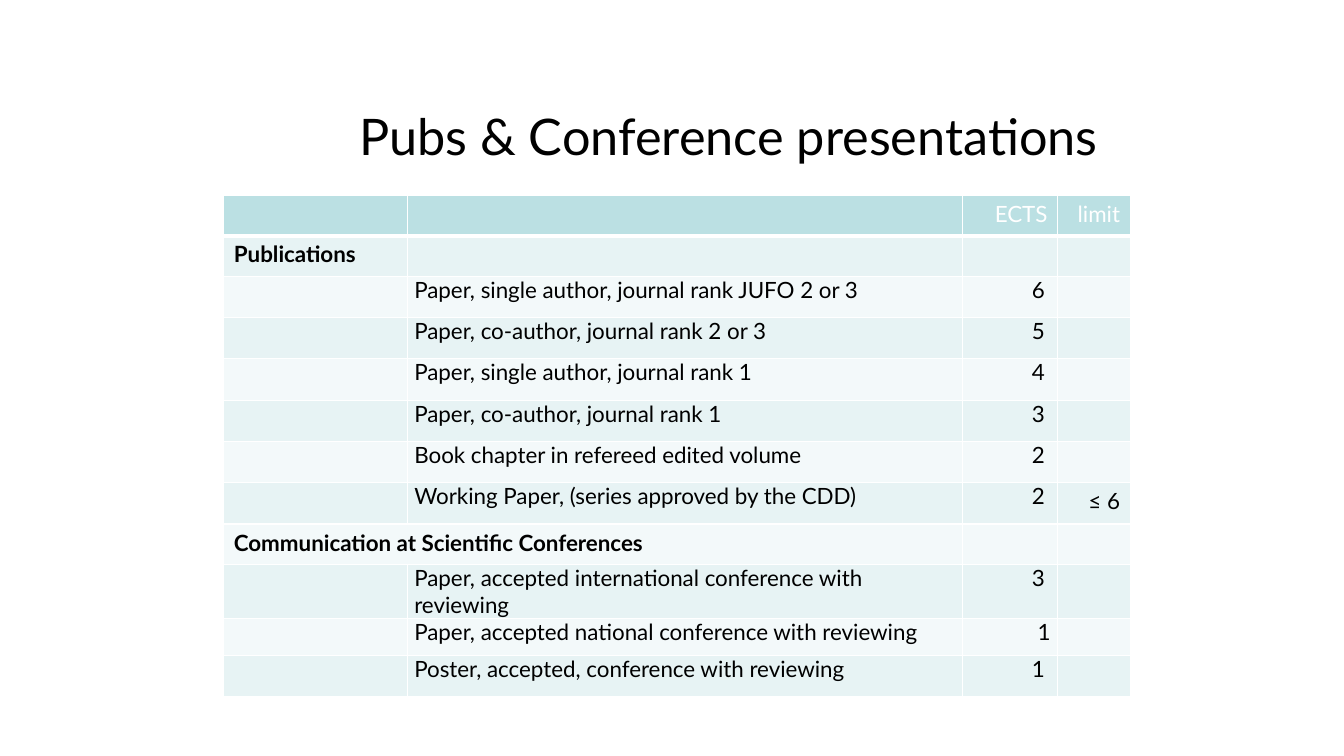
from lxml import etree
from pptx import Presentation
from pptx.dml.color import RGBColor
from pptx.enum.text import MSO_ANCHOR, PP_ALIGN
from pptx.oxml.ns import qn
from pptx.util import Inches, Pt

FONT = "Lato"
BLACK = RGBColor(0x00, 0x00, 0x00)
WHITE = RGBColor(0xFF, 0xFF, 0xFF)
HEADER_TEAL = RGBColor(0xBB, 0xE0, 0xE3)
BAND_DARK = RGBColor(0xE7, 0xF3, 0xF4)
BAND_LIGHT = RGBColor(0xF3, 0xF9, 0xFA)

COLUMN_WIDTHS = [1.82, 5.51, 0.94, 0.72]
# Group heading, description, credits, limit
ROWS = [
    ("", "", "ECTS", "limit"),
    ("Publications", "", "", ""),
    ("", "Paper, single author, journal rank JUFO 2 or 3", "6 ", ""),
    ("", "Paper, co-author, journal rank 2 or 3", "5 ", ""),
    ("", "Paper, single author, journal rank 1", "4 ", ""),
    ("", "Paper, co-author, journal rank 1", "3 ", ""),
    ("", "Book chapter in refereed edited volume", "2 ", ""),
    ("", "Working Paper, (series approved by the CDD)", "2 ", "≤ 6"),
    ("Communication at Scientific Conferences", "", "", ""),
    ("", "Paper, accepted international conference with reviewing", "3 ", ""),
    ("", "Paper, accepted national conference with reviewing", "1", ""),
    ("", "Poster, accepted, conference with reviewing", "1 ", ""),
]
CONFERENCE_ROW = 8
ROW_HEIGHTS = [0.4, 0.4] + [0.41] * 6 + [0.4, 0.53, 0.37, 0.41]


def add_run(paragraph, text, size, color, bold=False):
    run = paragraph.add_run()
    run.text = text
    run.font.name = FONT
    run.font.size = Pt(size)
    run.font.bold = bold
    run.font.color.rgb = color


def set_borders(cell, top, bottom):
    """Draw white cell borders, with the given top and bottom widths in points."""
    properties = cell._tc.get_or_add_tcPr()
    widths = {"a:lnL": 1, "a:lnR": 1, "a:lnT": top, "a:lnB": bottom}
    for index, (tag, width) in enumerate(widths.items()):
        line = etree.Element(qn(tag), w=str(Pt(width)))
        fill = etree.SubElement(line, qn("a:solidFill"))
        etree.SubElement(fill, qn("a:srgbClr"), val=str(WHITE))
        properties.insert(index, line)


presentation = Presentation()
presentation.slide_width = Inches(13.33)
presentation.slide_height = Inches(7.5)
slide = presentation.slides.add_slide(presentation.slide_layouts[6])

title = slide.shapes.add_textbox(Inches(2.1), Inches(0.99), Inches(10.25), Inches(0.87))
title.text_frame.word_wrap = True
title.text_frame.vertical_anchor = MSO_ANCHOR.TOP
title_paragraph = title.text_frame.paragraphs[0]
title_paragraph.alignment = PP_ALIGN.CENTER
add_run(title_paragraph, "Pubs & Conference presentations", 36, BLACK)

table = slide.shapes.add_table(
    len(ROWS), len(COLUMN_WIDTHS), Inches(2.22), Inches(1.94),
    Inches(sum(COLUMN_WIDTHS)), Inches(sum(ROW_HEIGHTS))).table
for column, width in zip(table.columns, COLUMN_WIDTHS):
    column.width = Inches(width)
for row, height in zip(table.rows, ROW_HEIGHTS):
    row.height = Inches(height)
table.cell(CONFERENCE_ROW, 0).merge(table.cell(CONFERENCE_ROW, 1))

for row_index, texts in enumerate(ROWS):
    is_header = row_index == 0
    band = BAND_DARK if row_index % 2 else BAND_LIGHT
    for column_index, text in enumerate(texts):
        cell = table.cell(row_index, column_index)
        cell.fill.solid()
        cell.fill.fore_color.rgb = HEADER_TEAL if is_header else band
        set_borders(cell, 3 if row_index == 1 else 1, 3 if is_header else 1)
        paragraph = cell.text_frame.paragraphs[0]
        if not text:
            etree.SubElement(paragraph._p, qn("a:endParaRPr"), sz="1600")
            continue
        if column_index >= 2:
            paragraph.alignment = PP_ALIGN.RIGHT
        if column_index in (1, 2) and not is_header:
            cell.margin_left = cell.margin_right = Inches(0.07)
            cell.margin_top = cell.margin_bottom = Inches(0)
        add_run(paragraph, text, 16, WHITE if is_header else BLACK, bold=column_index == 0)

presentation.save("out.pptx")
